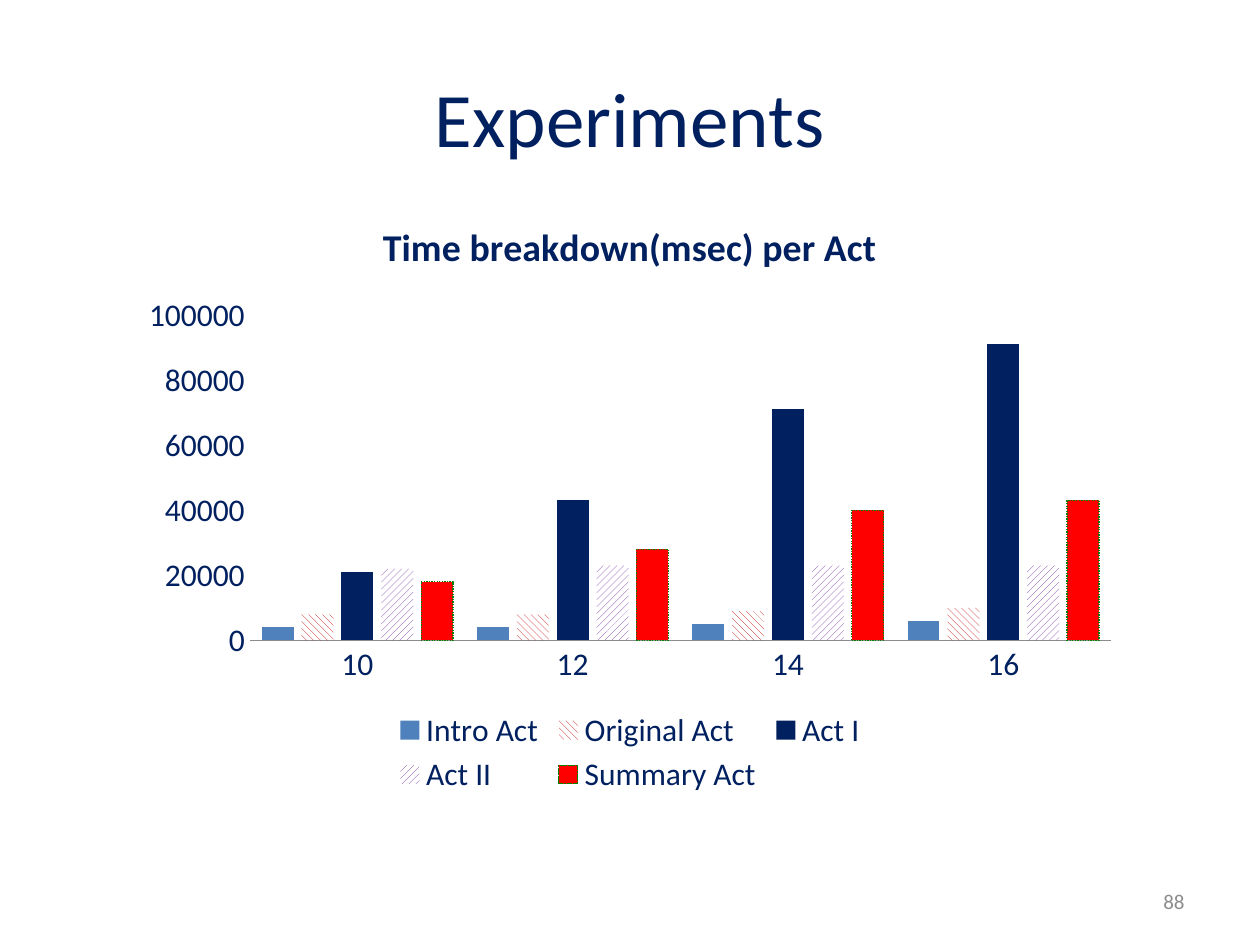
from pptx import Presentation
from pptx.chart.data import CategoryChartData
from pptx.dml.color import RGBColor
from pptx.enum.chart import XL_CHART_TYPE, XL_LEGEND_POSITION, XL_TICK_MARK
from pptx.enum.dml import MSO_LINE, MSO_PATTERN
from pptx.enum.text import MSO_ANCHOR, PP_ALIGN
from pptx.util import Pt

SCALE = 914400 / 126  # EMU per px
FONT = "Calibri"
COLORS = {
    "navy": "002060",
    "blue": "4F81BD",
    "brick": "C00000",
    "purple": "7030A0",
    "red": "FF0000",
    "green": "008000",
    "white": "FFFFFF",
    "gray": "8C8C8C",
}
CATS = ["10", "12", "14", "16"]
# name, values, colour, pattern, outline
ACTS = [
    ("Intro Act", (4000, 4000, 5000, 6000), "blue", None, None),
    ("Original Act", (8000, 8000, 9000, 10000), "brick",
     MSO_PATTERN.WIDE_DOWNWARD_DIAGONAL, None),
    ("Act I", (21000, 43000, 71000, 91000), "navy", None, None),
    ("Act II", (22000, 23000, 23000, 23000), "purple",
     MSO_PATTERN.WIDE_UPWARD_DIAGONAL, None),
    ("Summary Act", (18000, 28000, 40000, 43000), "red", None, "green"),
]


def px(n):
    return round(n * SCALE)


def rgb(name):
    return RGBColor.from_string(COLORS[name])


def style(font, size, color, bold=False):
    font.name = FONT
    font.size = Pt(size)
    font.bold = bold
    font.color.rgb = rgb(color)


def add_label(slide, box, text, size, color, align):
    frame = slide.shapes.add_textbox(*map(px, box)).text_frame
    frame.word_wrap = True
    frame.vertical_anchor = MSO_ANCHOR.MIDDLE
    frame.text = text
    para = frame.paragraphs[0]
    para.alignment = align
    style(para.runs[0].font, size, color)


def paint(bars, color, pattern, edge):
    fill = bars.format.fill
    if pattern is None:
        fill.solid()
        fill.fore_color.rgb = rgb(color)
    else:
        fill.patterned()
        fill.pattern = pattern
        fill.fore_color.rgb = rgb(color)
        fill.back_color.rgb = rgb("white")
    line = bars.format.line
    if edge is None:
        line.fill.background()
    else:
        line.color.rgb = rgb(edge)
        line.width = Pt(0.75)
        line.dash_style = MSO_LINE.ROUND_DOT


def add_bars(slide, box):
    data = CategoryChartData(number_format="0")
    data.categories = CATS
    for name, vals, *_ in ACTS:
        data.add_series(name, vals)
    chart = slide.shapes.add_chart(
        XL_CHART_TYPE.COLUMN_CLUSTERED, *map(px, box), data).chart
    style(chart.font, 18, "navy")

    chart.has_title = True
    frame = chart.chart_title.text_frame
    frame.text = "Time breakdown(msec) per Act"
    style(frame.paragraphs[0].runs[0].font, 21.6, "navy", bold=True)
    chart.chart_title.include_in_layout = False

    chart.has_legend = True
    chart.legend.position = XL_LEGEND_POSITION.BOTTOM
    chart.legend.include_in_layout = False

    for axis in (chart.category_axis, chart.value_axis):
        axis.has_major_gridlines = False
        axis.major_tick_mark = XL_TICK_MARK.NONE
        axis.minor_tick_mark = XL_TICK_MARK.NONE
    chart.category_axis.format.line.color.rgb = rgb("gray")
    scale = chart.value_axis
    scale.format.line.fill.background()
    scale.minimum_scale = 0
    scale.maximum_scale = 100000
    scale.major_unit = 20000
    scale.tick_labels.number_format = "0"
    scale.tick_labels.number_format_is_linked = False

    plot = chart.plots[0]
    plot.vary_by_categories = False
    plot.gap_width = 75
    plot.overlap = -25
    for bars, (_, _, color, pattern, edge) in zip(plot.series, ACTS):
        paint(bars, color, pattern, edge)


def main():
    deck = Presentation()
    deck.slide_width = px(1260)
    deck.slide_height = px(945)
    slide = deck.slides.add_slide(deck.slide_layouts[6])
    add_label(slide, (63, 38, 1134, 158), "Experiments", 44, "navy",
              PP_ALIGN.CENTER)
    add_bars(slide, (129, 195, 1002, 605))
    add_label(slide, (903, 876, 294, 50), "88", 12, "gray", PP_ALIGN.RIGHT)
    deck.save("out.pptx")


if __name__ == "__main__":
    main()
